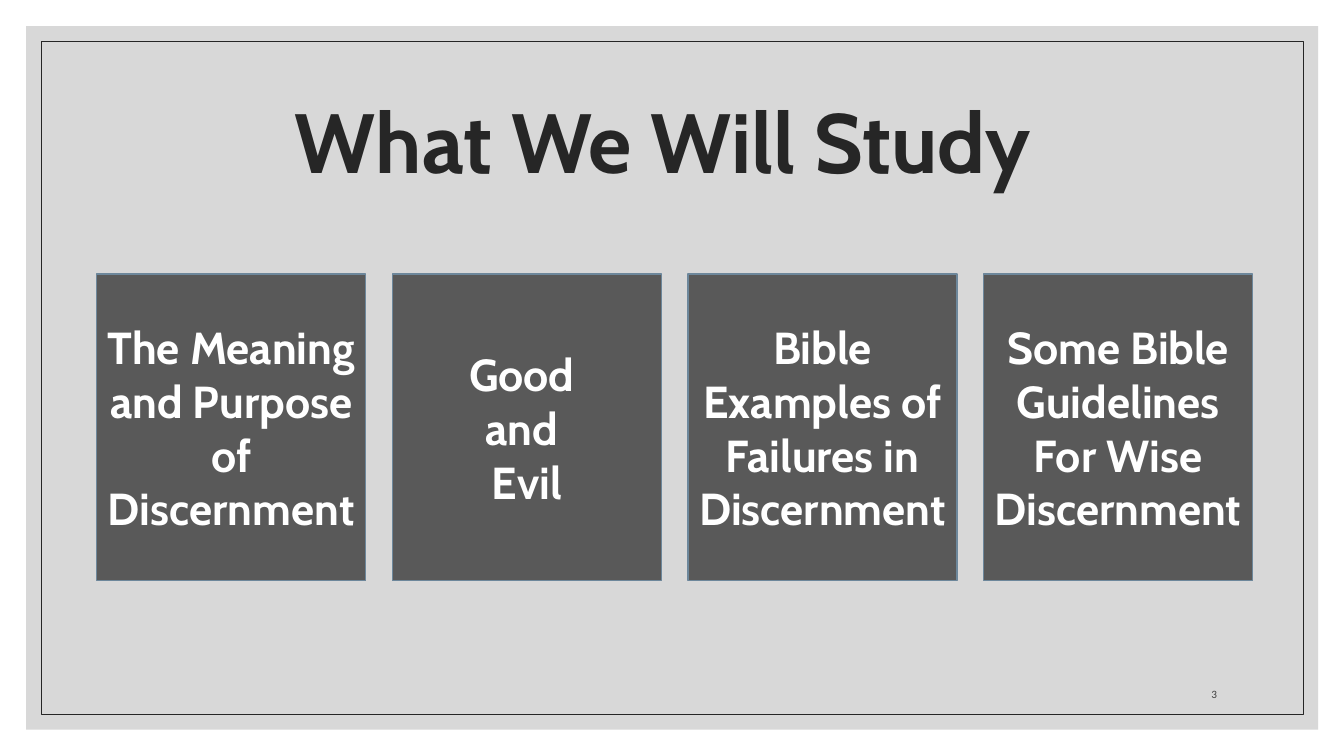
from dataclasses import dataclass

from lxml.etree import SubElement
from pptx import Presentation
from pptx.dml.color import RGBColor
from pptx.enum.shapes import MSO_SHAPE as Preset
from pptx.enum.text import MSO_ANCHOR as Anchor, MSO_AUTO_SIZE as AutoSize, PP_ALIGN as Align
from pptx.oxml.ns import qn
from pptx.shapes.autoshape import Shape
from pptx.slide import Slide
from pptx.util import Cm, Pt


@dataclass(frozen=True)
class Theme:
    heading_font: str = "Cabin"
    number_font: str = "Calibri"
    panel: str = "BFBFBF"
    panel_opacity: int = 60
    ink: str = "262626"
    card: str = "595959"
    card_edge: str = "6D879B"
    card_text: str = "FFFFFF"
    number: str = "404040"
    title_size: int = 60
    card_size: int = 32
    number_size: int = 8


@dataclass(frozen=True)
class Area:
    left: float
    top: float
    width: float
    height: float

    def lengths(self) -> tuple[Cm, Cm, Cm, Cm]:
        return Cm(self.left), Cm(self.top), Cm(self.width), Cm(self.height)


THEME = Theme()
PANEL = Area(0.66, 0.66, 32.56, 17.73)
FRAME = Area(1.04, 1.04, 31.8, 16.97)
TITLE = Area(2.97, 1.78, 27.94, 3.81)
FIRST_CARD = Area(2.44, 6.91, 6.78, 7.72)
NUMBER = Area(28.58, 16.76, 2.34, 1.02)
CARD_PITCH = 7.45
TOPICS = (
    ("The Meaning and Purpose of Discernment",),
    ("Good ", "and ", "Evil"),
    ("Bible Examples of Failures in Discernment",),
    ("Some Bible Guidelines For Wise Discernment",),
)


def write(box: Shape, *lines: str, size: int, color: str, font: str = THEME.heading_font,
          bold: bool = True, align: Align = Align.CENTER, anchor: Anchor = Anchor.MIDDLE,
          spacing: float = 1.0) -> None:
    frame = box.text_frame
    frame.word_wrap = True
    frame.auto_size = AutoSize.NONE
    frame.vertical_anchor = anchor
    frame.text = "\n".join(lines)
    for para in frame.paragraphs:
        para.alignment = align
        para.line_spacing = spacing
        for span in para.runs:
            span.font.name = font
            span.font.size = Pt(size)
            span.font.bold = bold
            span.font.color.rgb = RGBColor.from_string(color)


def add_box(page: Slide, area: Area, fill: str | None = None, opacity: int = 100,
            line: str | None = None, weight: float = 1) -> Shape:
    box = page.shapes.add_shape(Preset.RECTANGLE, *area.lengths())
    box.shadow.inherit = False
    if fill:
        box.fill.solid()
        box.fill.fore_color.rgb = RGBColor.from_string(fill)
        if opacity < 100:
            color = box.element.spPr.find(qn("a:solidFill")).find(qn("a:srgbClr"))
            SubElement(color, qn("a:alpha"), val=str(opacity * 1000))
    else:
        box.fill.background()
    if line:
        box.line.color.rgb = RGBColor.from_string(line)
        box.line.width = Pt(weight)
    else:
        box.line.fill.background()
    return box


def add_title(page: Slide) -> None:
    title = page.shapes.title
    title.left, title.top, title.width, title.height = TITLE.lengths()
    write(title, "What We Will Study ", size=THEME.title_size, color=THEME.ink, spacing=0.9)
    title.element.getparent().append(title.element)


def add_cards(page: Slide) -> None:
    for index, lines in enumerate(TOPICS):
        area = Area(FIRST_CARD.left + index * CARD_PITCH, FIRST_CARD.top,
                    FIRST_CARD.width, FIRST_CARD.height)
        card = add_box(page, area, fill=THEME.card, line=THEME.card_edge)
        write(card, *lines, size=THEME.card_size, color=THEME.card_text)


def main() -> None:
    deck = Presentation()
    deck.slide_width, deck.slide_height = Cm(33.87), Cm(19.05)
    page = deck.slides.add_slide(deck.slide_layouts.get_by_name("Title Only"))
    add_box(page, PANEL, fill=THEME.panel, opacity=THEME.panel_opacity)
    add_box(page, FRAME, line=THEME.ink, weight=0.5)
    add_title(page)
    add_cards(page)
    number = page.shapes.add_textbox(*NUMBER.lengths())
    write(number, "3", size=THEME.number_size, color=THEME.number, font=THEME.number_font,
          bold=False, align=Align.RIGHT, anchor=Anchor.BOTTOM)
    deck.save("out.pptx")


if __name__ == "__main__":
    main()
